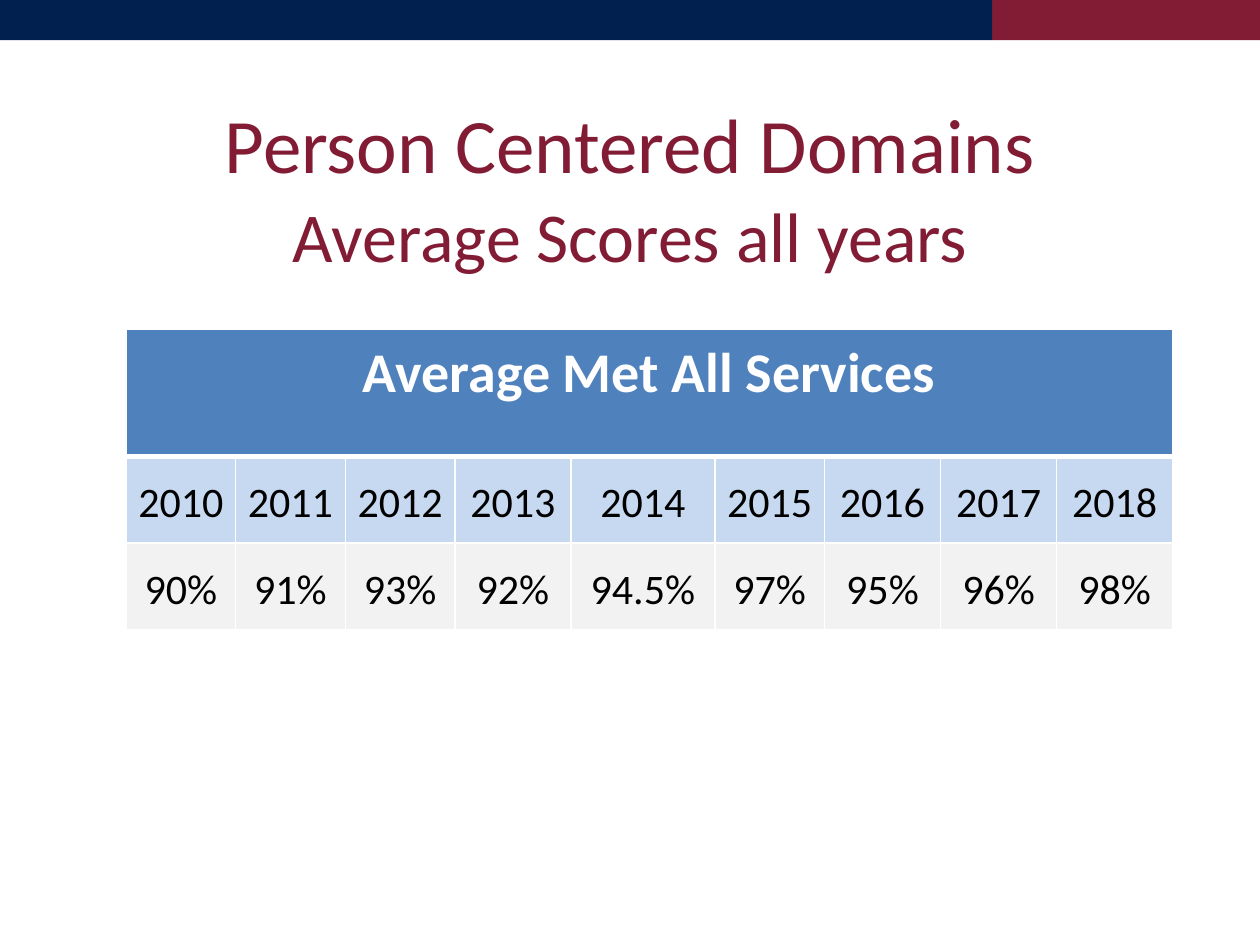
import dataclasses

import lxml.etree
import pptx
import pptx.dml.color
import pptx.enum.shapes
import pptx.enum.text
import pptx.oxml.ns
import pptx.util

Cm = pptx.util.Cm
Pt = pptx.util.Pt
RGB = pptx.dml.color.RGBColor.from_string
Anchor = pptx.enum.text.MSO_ANCHOR
CENTER = pptx.enum.text.PP_ALIGN.CENTER


@dataclasses.dataclass(frozen=True)
class Theme:
    font: str = "Calibri"
    navy: str = "011F4F"
    maroon: str = "821C35"
    header_fill: str = "4F81BD"
    year_fill: str = "C6D9F1"
    score_fill: str = "F2F2F2"
    white: str = "FFFFFF"
    black: str = "000000"
    title_size: int = 44
    gap_size: int = 48
    subtitle_size: int = 40
    header_size: int = 32
    cell_size: int = 24
    thin: int = 1
    thick: int = 3


def apply(target, values):
    for name, value in values.items():
        setattr(target, name, value)


@dataclasses.dataclass
class SlideBuilder:
    """Draws styled elements on the current slide."""

    theme: Theme
    slide: object

    def format_font(self, font, size, color, bold=False):
        apply(font, {"name": self.theme.font, "size": Pt(size), "bold": bold})
        font.color.rgb = RGB(color)

    def bar(self, left, width, height, color):
        band = self.slide.shapes.add_shape(
            pptx.enum.shapes.MSO_SHAPE.RECTANGLE, Cm(left), 0, Cm(width), Cm(height))
        band.shadow.inherit = False
        band.fill.solid()
        band.fill.fore_color.rgb = RGB(color)
        band.line.fill.background()

    def title(self, left, top, width, height, pieces):
        heading = self.slide.shapes.title
        apply(heading, {"left": Cm(left), "top": Cm(top),
                        "width": Cm(width), "height": Cm(height)})
        frame = heading.text_frame
        apply(frame, {"margin_left": 0, "margin_right": 0, "margin_top": 0,
                      "margin_bottom": 0, "word_wrap": True,
                      "vertical_anchor": Anchor.TOP,
                      "auto_size": pptx.enum.text.MSO_AUTO_SIZE.NONE})
        line = frame.paragraphs[0]
        apply(line, {"alignment": CENTER, "line_spacing": Pt(49)})
        for text, size in pieces:
            run = line.add_run()
            run.text = text
            self.format_font(run.font, size, self.theme.maroon)

    def borders(self, cell, top, bottom):
        properties = cell._tc.get_or_add_tcPr()
        widths = {"lnL": self.theme.thin, "lnR": self.theme.thin,
                  "lnT": top, "lnB": bottom}
        for position, (tag, width) in enumerate(widths.items()):
            edge = lxml.etree.Element(pptx.oxml.ns.qn(f"a:{tag}"), w=str(Pt(width)))
            fill = lxml.etree.SubElement(edge, pptx.oxml.ns.qn("a:solidFill"))
            lxml.etree.SubElement(fill, pptx.oxml.ns.qn("a:srgbClr"), val=self.theme.white)
            properties.insert(position, edge)

    def cell(self, cell, text, fill, size, color, bold, anchor):
        apply(cell, {"text": text, "vertical_anchor": anchor,
                     "margin_left": Cm(0.18), "margin_right": Cm(0.18),
                     "margin_top": 0, "margin_bottom": 0})
        cell.fill.solid()
        cell.fill.fore_color.rgb = RGB(fill)
        line = cell.text_frame.paragraphs[0]
        apply(line, {"alignment": CENTER, "line_spacing": 1.15})
        self.format_font(line.font, size, color, bold)
        for run in line.runs:
            self.format_font(run.font, size, color, bold)

    def score_table(self, left, top, widths, heights, header, scores):
        theme = self.theme
        columns = len(widths)
        table = self.slide.shapes.add_table(
            len(heights), columns, Cm(left), Cm(top),
            Cm(sum(widths)), Cm(sum(heights))).table
        for column, width in zip(table.columns, widths):
            column.width = Cm(width)
        for row, height in zip(table.rows, heights):
            row.height = Cm(height)
        header_row = [header] + [""] * (columns - 1)
        styles = [
            (theme.header_fill, theme.header_size, theme.white, True, Anchor.TOP),
            (theme.year_fill, theme.cell_size, theme.black, False, Anchor.MIDDLE),
            (theme.score_fill, theme.cell_size, theme.black, False, Anchor.MIDDLE),
        ]
        edges = [theme.thin, theme.thick, theme.thin, theme.thin]
        for r, (texts, style) in enumerate(zip([header_row, scores.keys(), scores.values()], styles)):
            for c, text in enumerate(texts):
                self.cell(table.cell(r, c), text, *style)
                self.borders(table.cell(r, c), edges[r], edges[r + 1])
        table.cell(0, 0).merge(table.cell(0, columns - 1))


def main():
    theme = Theme()
    deck = pptx.Presentation()
    apply(deck, {"slide_width": Cm(25.4), "slide_height": Cm(19.05)})
    builder = SlideBuilder(theme, deck.slides.add_slide(deck.slide_layouts[5]))

    builder.bar(20, 5.4, 0.81, theme.maroon)
    builder.bar(0, 20, 0.81, theme.navy)
    builder.title(2.54, 2.11, 20.32, 1.85, [
        ("Person Centered Domains", theme.title_size),
        (" ", theme.gap_size),
        ("Average Scores all years", theme.subtitle_size),
    ])

    scores = {"2010": "90%", "2011": "91%", "2012": "93%", "2013": "92%",
              "2014": "94.5%", "2015": "97%", "2016": "95%", "2017": "96%",
              "2018": "98%"}
    narrow, medium, wide = 2.21, 2.34, 2.9
    widths = [narrow] * 3 + [medium, wide, narrow] + [medium] * 3
    builder.score_table(2.54, 6.63, widths, [2.57, 1.75, 1.75],
                        "Average Met All Services", scores)
    deck.save("out.pptx")


if __name__ == "__main__":
    main()
